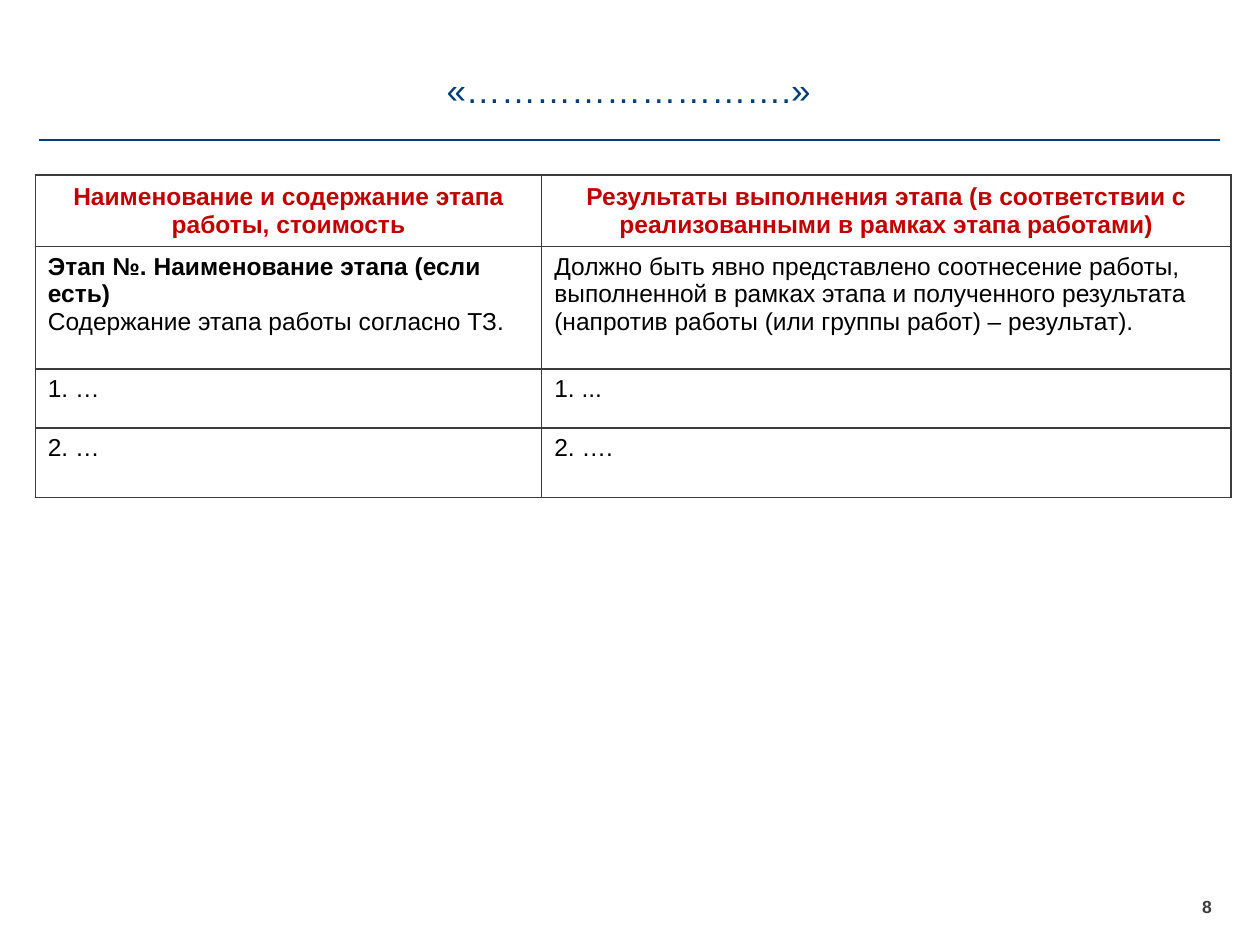
import pptx
import pptx.util
import pptx.dml.color
import pptx.enum.shapes
import pptx.enum.text
import pptx.oxml
import pptx.oxml.ns

Inches = pptx.util.Inches
Pt = pptx.util.Pt
ALIGN = pptx.enum.text.PP_ALIGN
ANCHOR = pptx.enum.text.MSO_ANCHOR

NAVY, GREY, RED, BLACK = "004077", "3C3C3C", "C00000", "000000"
WIDTHS = [4.02, 5.47]
HEIGHTS = [0.54, 0.97, 0.47, 0.55]
HEADS = [
    "Наименование и содержание этапа работы, стоимость",
    "Результаты выполнения этапа (в соответствии с реализованными в рамках этапа работами)",
]
STAGES = [
    [
        ["Этап №. Наименование этапа (если есть)", "Содержание этапа работы согласно ТЗ."],
        ["Должно быть явно представлено соотнесение работы, выполненной в рамках этапа "
         "и полученного результата (напротив работы (или группы работ) – результат)."],
    ],
    [["1. …"], ["1. ..."]],
    [["2. …"], ["2. …."]],
]


def paint(color, code):
    """Set a colour from a hex string."""
    color.rgb = pptx.dml.color.RGBColor.from_string(code)


def style(par, code, align=ALIGN.LEFT, **form):
    """Format a paragraph and its font."""
    par.alignment = align
    for key, value in {"name": "Arial", "bold": False, **form}.items():
        setattr(par.font, key, value)
    paint(par.font.color, code)


def frame(text, **form):
    """Set the layout of a text frame without insets."""
    base = dict.fromkeys(["margin_left", "margin_top", "margin_right", "margin_bottom"], 0)
    for key, value in {**base, **form}.items():
        setattr(text, key, value)


def add_title(slide, words):
    """Fill and place the title placeholder."""
    title = slide.shapes.title
    title.left, title.top = Inches(0.31), Inches(0.21)
    title.width, title.height = Inches(9.36), Inches(0.67)
    title.text_frame.text = words
    frame(title.text_frame, word_wrap=True, vertical_anchor=ANCHOR.BOTTOM,
          auto_size=pptx.enum.text.MSO_AUTO_SIZE.NONE)
    style(title.text_frame.paragraphs[0], NAVY, ALIGN.CENTER, size=Pt(20))


def add_rule(slide):
    """Draw the line under the title."""
    rule = slide.shapes.add_connector(
        pptx.enum.shapes.MSO_CONNECTOR.STRAIGHT,
        Inches(0.31), Inches(1.11), Inches(9.68), Inches(1.11))
    rule.line.width = Pt(1)
    paint(rule.line.color, NAVY)
    props = rule._element.spPr
    props.append(pptx.oxml.parse_xml(f"<a:effectLst {pptx.oxml.ns.nsdecls('a')}/>"))


def add_number(slide, words):
    """Write the page number."""
    box = slide.shapes.add_textbox(Inches(9.54), Inches(7.11), Inches(0.24), Inches(0.18))
    box.text_frame.text = words
    frame(box.text_frame, word_wrap=True)
    style(box.text_frame.paragraphs[0], GREY, size=Pt(10), bold=True)


def edge(cell):
    """Give a cell four thin borders and no fill."""
    props = cell._tc.get_or_add_tcPr()
    for side in "LRTB":
        props.append(pptx.oxml.parse_xml(
            f'<a:ln{side} {pptx.oxml.ns.nsdecls("a")} w="{Pt(1)}">'
            f'<a:solidFill><a:srgbClr val="{GREY}"/></a:solidFill></a:ln{side}>'))
    cell.fill.background()


def fill_cell(cell, lines, head):
    """Write the lines of a cell; a lead line above others is bold."""
    edge(cell)
    cell.vertical_anchor = ANCHOR.MIDDLE if head else ANCHOR.TOP
    cell.text = "\n".join(lines)
    for rank, par in enumerate(cell.text_frame.paragraphs):
        lead = rank == 0 and len(lines) > 1
        style(par, RED if head else BLACK, ALIGN.CENTER if head else ALIGN.LEFT,
              size=Pt(14), bold=head or lead)


def add_grid(slide):
    """Build the table of stages and results."""
    rows = [[[head] for head in HEADS]] + STAGES
    grid = slide.shapes.add_table(
        len(rows), len(WIDTHS), Inches(0.28), Inches(1.39),
        Inches(sum(WIDTHS)), Inches(sum(HEIGHTS))).table
    for col, width in zip(grid.columns, WIDTHS):
        col.width = Inches(width)
    for row, height in zip(grid.rows, HEIGHTS):
        row.height = Inches(height)
    for r, row in enumerate(rows):
        for c, lines in enumerate(row):
            fill_cell(grid.cell(r, c), lines, r == 0)


def main():
    """Build and save the slide."""
    deck = pptx.Presentation()
    deck.slide_width, deck.slide_height = Inches(10), Inches(7.5)
    slide = deck.slides.add_slide(deck.slide_layouts[5])
    add_rule(slide)
    add_number(slide, "8")
    add_grid(slide)
    add_title(slide, "«……………………….»")
    deck.save("out.pptx")


if __name__ == "__main__":
    main()
